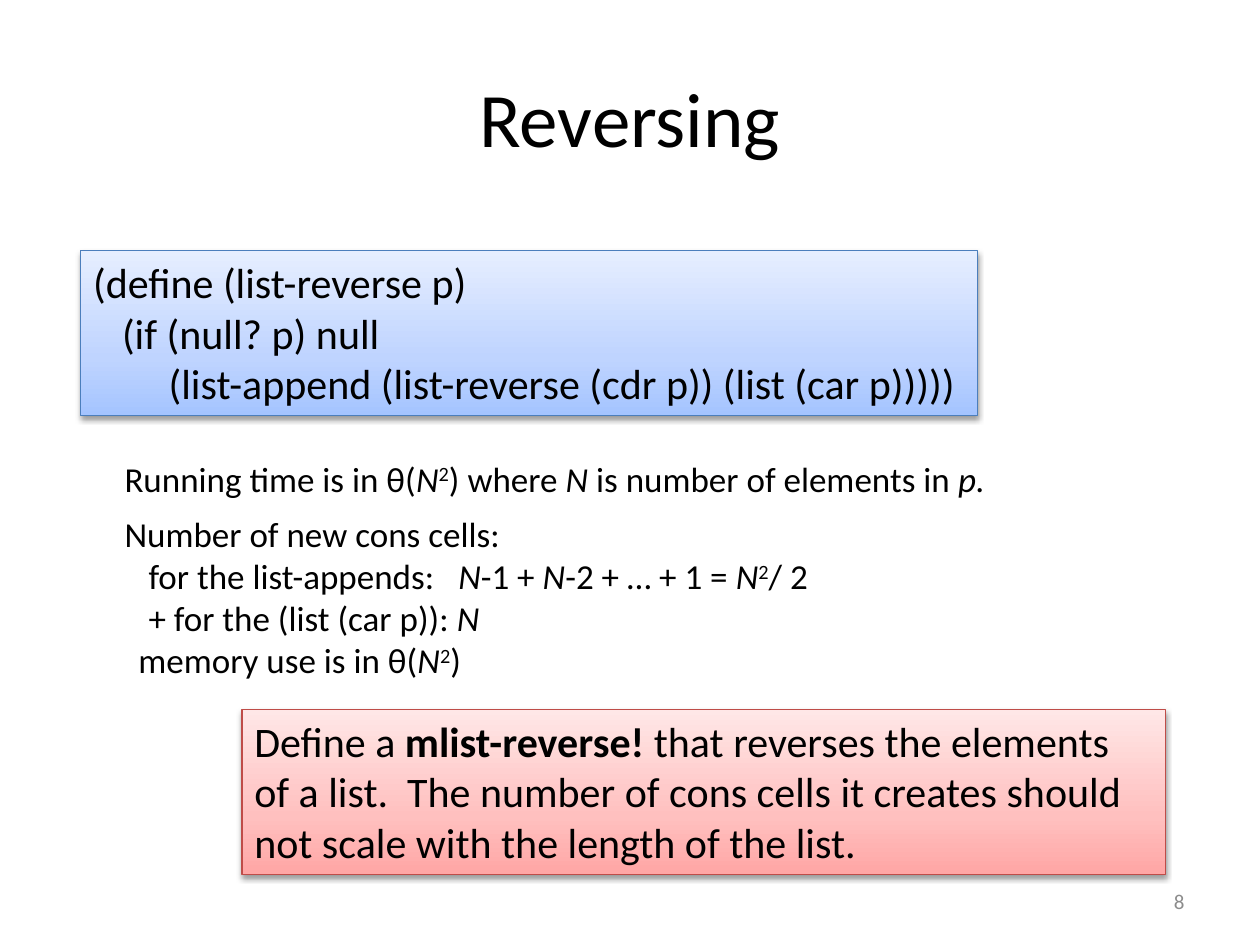
from copy import deepcopy

from lxml import etree
from pptx import Presentation
from pptx import util as u
from pptx.dml.color import RGBColor
from pptx.enum import shapes, text
from pptx.oxml.ns import qn

THEME = {
    "font": "Calibri", "ink": "000000", "muted": "8C8C8C",
    "title": 44, "callout": 24, "body": 20, "number": 12,
    "blue": {"line": "4B7EBC", "stops": ("A4C4FF", "BFD4FF", "E6EEFF")},
    "red": {"line": "BF4C48", "stops": ("FFA6A5", "FFC0BF", "FFE7E7")},
    "stop_positions": (0, 0.35, 1),
}

# Run styles
ITALIC, BOLD, SUPER = {"italic": True}, {"bold": True}, {"baseline": 30000}
WIDE = {"spc": 900}
N, SQUARED = ("N", ITALIC), ("2", SUPER)

# Content: each paragraph is (left indent in inches, runs)
TITLE = [(0, ["Reversing"])]
NUMBER = [(0, ["8"])]
CODE = [
    (0, ["(define (list-reverse p)"]),
    (0.23, ["(if (null? p) null"]),
    (0.6, ["(list-append (list-reverse (cdr p)) (list (car p)))))"]),
]
TIME = [(0, ["Running time is in θ(", N, SQUARED, ") where ", N,
             " is number of elements in ", ("p.", ITALIC)])]
CELLS = [
    (0, ["Number of new cons cells:"]),
    (0.19, ["for the list-appends:", (" ", WIDE), N, "-1 + ", N,
            "-2 + … + 1 = ", N, SQUARED, "/ 2"]),
    (0.19, ["+ for the (list (car p)): ", N]),
    (0.11, ["memory use is in θ(", N, SQUARED, ")"]),
]
EXERCISE = [(0, ["Define a ", ("mlist-reverse!", BOLD),
                 " that reverses the elements of a list.  The number of cons "
                 "cells it creates should not scale with the length of the list."])]

LEFT, CENTER, RIGHT = text.PP_ALIGN.LEFT, text.PP_ALIGN.CENTER, text.PP_ALIGN.RIGHT
TOP, MIDDLE = text.MSO_ANCHOR.TOP, text.MSO_ANCHOR.MIDDLE

# Text boxes: place, content, size, colour, alignment, anchor, wrap
TEXTS = [
    ((0.5, 0.3, 9, 1.25), TITLE, "title", "ink", CENTER, MIDDLE, True),
    ((7.17, 6.95, 2.33, 0.4), NUMBER, "number", "muted", RIGHT, MIDDLE, True),
    ((0.89, 3.58, 7.1, 0.44), TIME, "body", "ink", LEFT, TOP, False),
    ((0.89, 4.02, 5.75, 1.67), CELLS, "body", "ink", LEFT, TOP, False),
]
# Callouts: place, content, palette, wrap
CALLOUTS = [
    ((0.64, 1.99, 7.12, 1.31), CODE, "blue", False),
    ((1.92, 5.63, 7.33, 1.31), EXERCISE, "red", True),
]


def assign(target, values):
    for name, value in values.items():
        setattr(target, name, value)


def write(box, content, size, color, align, anchor, wrap):
    frame = box.text_frame
    assign(frame, {"word_wrap": wrap, "vertical_anchor": anchor})
    for index, (indent, runs) in enumerate(content):
        para = frame.add_paragraph() if index else frame.paragraphs[0]
        para.alignment = align
        if indent:
            para._p.get_or_add_pPr().set("marL", str(u.Inches(indent)))
        for run in runs:
            words, style = (run, {}) if isinstance(run, str) else run
            span = para.add_run()
            span.text = words
            assign(span.font, {"name": THEME["font"], "size": u.Pt(THEME[size])})
            span.font.color.rgb = RGBColor.from_string(THEME[color])
            for name, value in style.items():
                if name in ("baseline", "spc"):
                    span._r.get_or_add_rPr().set(name, str(value))
                else:
                    setattr(span.font, name, value)


def paint(box, palette):
    # Three-stop gradient, running upwards
    box.fill.gradient()
    box.fill.gradient_angle = 90
    stop_list = box._element.spPr.find(qn("a:gradFill")).find(qn("a:gsLst"))
    stop_list.append(deepcopy(stop_list[-1]))
    stops = zip(box.fill.gradient_stops, THEME["stop_positions"], palette["stops"])
    for stop, position, color in stops:
        stop.position = position
        stop.color.rgb = RGBColor.from_string(color)
    box.line.color.rgb = RGBColor.from_string(palette["line"])
    box.line.width = u.Pt(0.75)
    # Soft shadow below
    box.shadow.inherit = False
    effects = box._element.spPr.find(qn("a:effectLst"))
    shadow = etree.SubElement(effects, qn("a:outerShdw"), blurRad=str(u.Pt(3.1)),
                              dist=str(u.Pt(1.6)), dir="5400000", rotWithShape="0")
    shade = etree.SubElement(shadow, qn("a:srgbClr"), val="000000")
    etree.SubElement(shade, qn("a:alpha"), val="38000")


def main():
    deck = Presentation()
    assign(deck, {"slide_width": u.Inches(10), "slide_height": u.Inches(7.5)})
    page = deck.slides.add_slide(deck.slide_layouts[6])

    # Title, page number and analysis
    for place, *details in TEXTS:
        write(page.shapes.add_textbox(*map(u.Inches, place)), *details)

    # Code and exercise callouts
    for place, content, palette, wrap in CALLOUTS:
        box = page.shapes.add_shape(shapes.MSO_SHAPE.RECTANGLE, *map(u.Inches, place))
        paint(box, THEME[palette])
        write(box, content, "callout", "ink", LEFT, TOP, wrap)

    deck.save("out.pptx")


if __name__ == "__main__":
    main()
